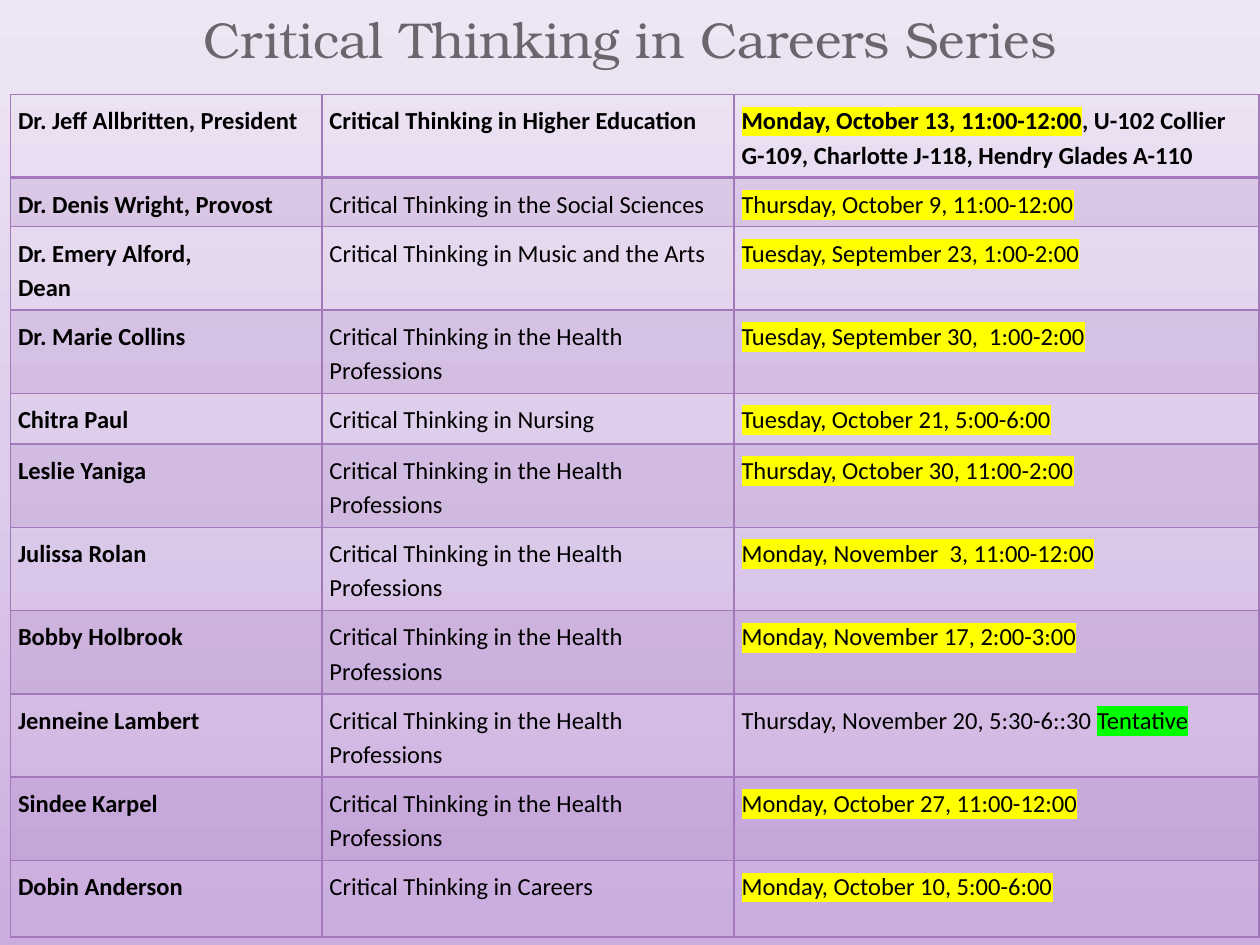
from copy import deepcopy
from pptx import Presentation
from pptx.dml.color import RGBColor
from pptx.enum.text import MSO_ANCHOR, PP_ALIGN
from pptx.oxml import parse_xml
from pptx.oxml.ns import nsdecls
from pptx.util import Pt

PURPLE, YELLOW, GREEN = "A379BB", "FFFF00", "00FF00"
HEALTH = "Critical Thinking in the Health Professions"
WIDTHS = [178, 235.5, 300]
TALL = 47.6
HEIGHTS = [TALL, 28, TALL, TALL, 29, TALL, TALL, TALL, TALL, TALL, 43.7]
TALKS = [
    ("Dr. Jeff Allbritten, President", "Critical Thinking in Higher Education",
     [("Monday, October 13, 11:00-12:00", YELLOW),
      (", U-102 Collier G-109, Charlotte J-118, Hendry Glades A-110", None)]),
    ("Dr. Denis Wright, Provost", "Critical Thinking in the Social Sciences",
     [("Thursday, October 9, 11:00-12:00", YELLOW)]),
    ("Dr. Emery Alford,\nDean", "Critical Thinking in Music and the Arts",
     [("Tuesday, September 23, 1:00-2:00", YELLOW)]),
    ("Dr. Marie Collins", HEALTH, [("Tuesday, September 30,  1:00-2:00", YELLOW)]),
    ("Chitra Paul", "Critical Thinking in Nursing",
     [("Tuesday, October 21, 5:00-6:00", YELLOW)]),
    ("Leslie Yaniga", HEALTH, [("Thursday, October 30, 11:00-2:00", YELLOW)]),
    ("Julissa Rolan", HEALTH, [("Monday, November  3, 11:00-12:00", YELLOW)]),
    ("Bobby Holbrook", HEALTH, [("Monday, November 17, 2:00-3:00", YELLOW)]),
    ("Jenneine Lambert", HEALTH,
     [("Thursday, November 20, 5:30-6::30 ", None), ("Tentative", GREEN)]),
    ("Sindee Karpel", HEALTH, [("Monday, October 27, 11:00-12:00", YELLOW)]),
    ("Dobin Anderson", "Critical Thinking in Careers",
     [("Monday, October 10, 5:00-6:00", YELLOW)]),
]


def color(code):
    """Turn a hex string into a colour."""
    return RGBColor.from_string(code)


def element(body):
    """Parse a fragment in the drawing namespace."""
    tag, rest = body.split(" ", 1)
    return parse_xml(f"{tag} {nsdecls('a')} {rest}")


def write(frame, text, *, font="Calibri", size=14, ink="000000", bold=False,
          align=PP_ALIGN.LEFT, spacing=1.15):
    """Fill a frame with a string, or with pairs of text and highlight."""
    frame.word_wrap = True
    if isinstance(text, str):
        lines = [[(line, None)] for line in text.split("\n")]
    else:
        lines = [text]
    for i, line in enumerate(lines):
        para = frame.add_paragraph() if i else frame.paragraphs[0]
        para.alignment, para.line_spacing = align, spacing
        for words, mark in line:
            run = para.add_run()
            run.text = words
            run.font.size, run.font.bold = Pt(size), bold
            run.font.color.rgb = color(ink)
            if mark:
                run.font._element.append(element(
                    f'<a:highlight ><a:srgbClr val="{mark}"/></a:highlight>'))
            run.font.name = font


def paint(slide):
    """Give the slide its vertical gradient."""
    fill = slide.background.fill
    fill.gradient()
    fill.gradient_angle = 90
    first = fill.gradient_stops[0]._gs
    first.addnext(deepcopy(first))
    shades = [(0, "CAACDF"), (0.5, "DDCCEA"), (1, "EEE6F4")]
    for stop, (place, shade) in zip(fill.gradient_stops, shades):
        stop.position = place
        stop.color.rgb = color(shade)


def border(cell, top, bottom):
    """Draw the four edges of a cell."""
    props = cell._tc.get_or_add_tcPr()
    for side, width in zip("LRTB", (1, 1, top, bottom)):
        props.append(element(
            f'<a:ln{side} w="{Pt(width)}"><a:solidFill><a:srgbClr val="{PURPLE}"/>'
            f'</a:solidFill></a:ln{side}>'))


def shade(cell, banded):
    """Tint a banded cell and clear any other."""
    if not banded:
        cell.fill.background()
        return
    cell.fill.solid()
    cell.fill.fore_color.rgb = color(PURPLE)
    tint = cell._tc.tcPr.find(".//{*}solidFill[last()]/{*}srgbClr")
    tint = cell.fill._xPr.findall("{*}solidFill/{*}srgbClr")[0]
    tint.append(element('<a:alpha val="20000"/>'))


def title(slide):
    """Add the heading."""
    box = slide.shapes.add_textbox(Pt(36), Pt(12), Pt(648), Pt(30.5))
    box.text_frame.vertical_anchor = MSO_ANCHOR.BOTTOM
    write(box.text_frame, "Critical Thinking in Careers Series",
          font="TeX Gyre Bonum", size=28.8, ink="69676D",
          align=PP_ALIGN.CENTER, spacing=1.0)


def schedule(slide):
    """Add the table of talks."""
    table = slide.shapes.add_table(
        len(TALKS), len(WIDTHS), Pt(6), Pt(54),
        Pt(sum(WIDTHS)), Pt(sum(HEIGHTS))).table
    table.first_row = table.horz_banding = False
    for column, width in zip(table.columns, WIDTHS):
        column.width = Pt(width)
    for i, (row, height, talk) in enumerate(zip(table.rows, HEIGHTS, TALKS)):
        row.height = Pt(height)
        for j, (cell, text) in enumerate(zip(row.cells, talk)):
            cell.margin_left = cell.margin_right = Pt(4.3)
            cell.margin_top = cell.margin_bottom = Pt(4.3)
            border(cell, 2 if i == 1 else 1, 2 if i == 0 else 1)
            shade(cell, i % 2 == 1)
            write(cell.text_frame, text, bold=i == 0 or j == 0)


def main():
    """Build the slide and save it."""
    deck = Presentation()
    deck.slide_width, deck.slide_height = Pt(720), Pt(540)
    slide = deck.slides.add_slide(deck.slide_layouts[6])
    paint(slide)
    title(slide)
    schedule(slide)
    deck.save("out.pptx")


if __name__ == "__main__":
    main()
